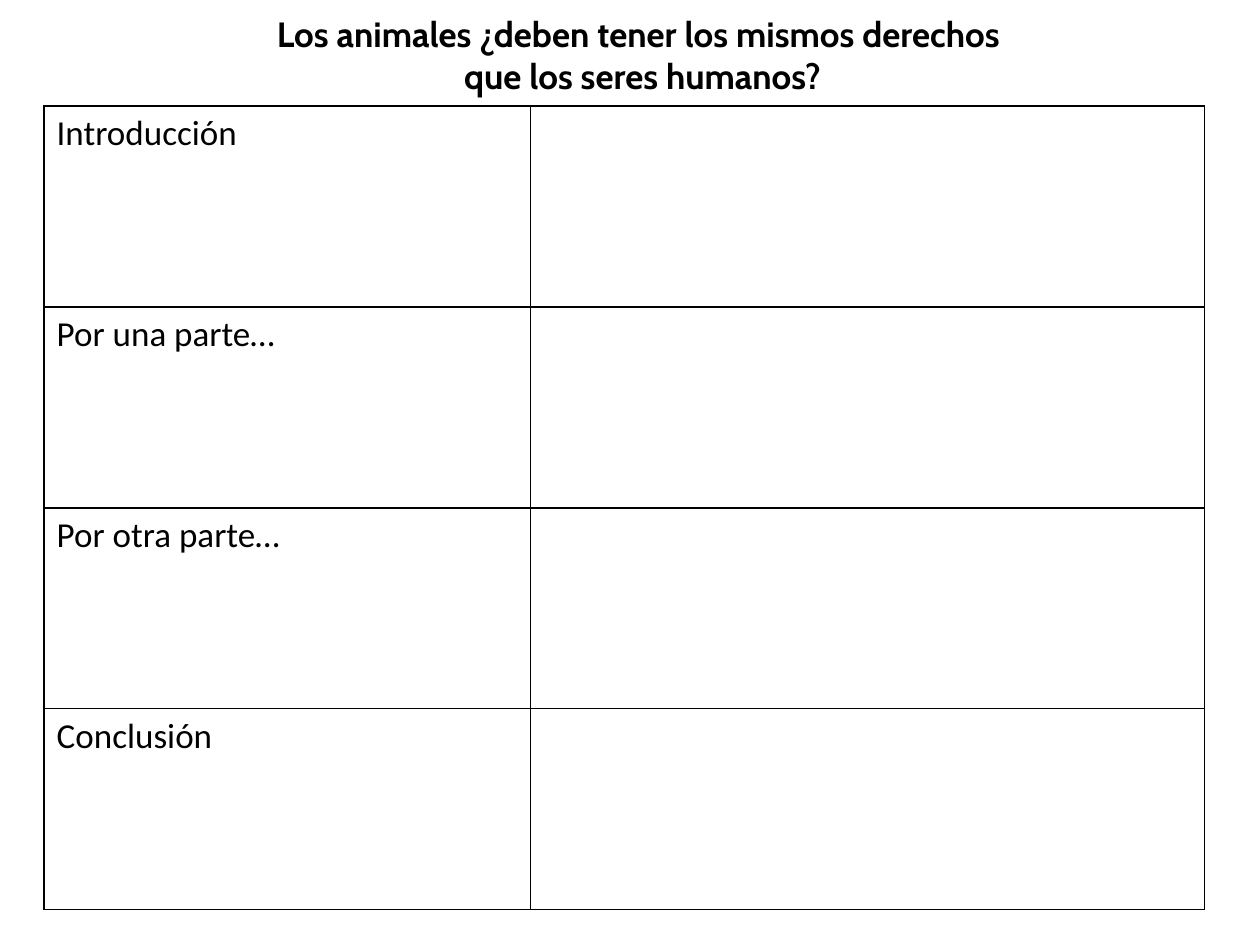
"""Build a writing-frame slide: a debate question above a four-part essay table."""
from dataclasses import dataclass

from lxml import etree
from pptx import Presentation
from pptx import util as u
from pptx.dml.color import RGBColor
from pptx.enum import text
from pptx.oxml import ns

BLACK = RGBColor(0x00, 0x00, 0x00)
WHITE = RGBColor(0xFF, 0xFF, 0xFF)
FONT_SIZE = u.Pt(20)
BORDER_WIDTH = u.Pt(1)
BORDER_SIDES = ("a:lnL", "a:lnR", "a:lnT", "a:lnB")

QUESTION_LINES = (
    "Los animales ¿deben tener los mismos derechos ",
    "que los seres humanos?",
)
SECTIONS = ("Introducción", "Por una parte…", "Por otra parte…", "Conclusión")
COLUMN_WIDTHS = (u.Pt(277.9), u.Pt(385.2))
ROW_HEIGHT = u.Pt(114.84)


@dataclass(frozen=True)
class Box:
    left: int
    top: int
    width: int
    height: int


QUESTION_BOX = Box(u.Pt(14.4), u.Pt(3.6), u.Pt(705.6), u.Pt(177.8))
FRAME_BOX = Box(u.Pt(25.2), u.Pt(60.5), sum(COLUMN_WIDTHS), ROW_HEIGHT * len(SECTIONS))


def add_run(paragraph, wording: str, font_name: str, bold: bool = False) -> None:
    run = paragraph.add_run()
    run.text = wording
    run.font.name = font_name
    run.font.size = FONT_SIZE
    run.font.bold = bold
    run.font.color.rgb = BLACK


def add_borders(cell) -> None:
    properties = cell._tc.get_or_add_tcPr()
    for position, side in enumerate(BORDER_SIDES):
        border = etree.Element(ns.qn(side), w=str(BORDER_WIDTH))
        fill = etree.SubElement(border, ns.qn("a:solidFill"))
        etree.SubElement(fill, ns.qn("a:srgbClr"), val=str(BLACK))
        properties.insert(position, border)


def add_question(slide, box: Box, lines: tuple[str, ...]) -> None:
    question = slide.shapes.add_textbox(box.left, box.top, box.width, box.height)
    question.text_frame.word_wrap = True
    paragraph = question.text_frame.paragraphs[0]
    paragraph.alignment = text.PP_ALIGN.CENTER
    for index, line in enumerate(lines):
        if index:
            paragraph.add_line_break()
        add_run(paragraph, line, "Cabin", bold=True)


def add_frame(slide, box: Box, sections: tuple[str, ...]) -> None:
    frame = slide.shapes.add_table(
        len(sections), len(COLUMN_WIDTHS), box.left, box.top, box.width, box.height
    ).table
    frame.first_row = False
    frame.horz_banding = False
    for column, width in zip(frame.columns, COLUMN_WIDTHS):
        column.width = width
    for row, section in zip(frame.rows, sections):
        row.height = ROW_HEIGHT
        for cell in row.cells:
            cell.fill.solid()
            cell.fill.fore_color.rgb = WHITE
            add_borders(cell)
        add_run(row.cells[0].text_frame.paragraphs[0], section, "Calibri")


def main() -> None:
    deck = Presentation()
    deck.slide_width, deck.slide_height = u.Pt(720), u.Pt(540)
    slide = deck.slides.add_slide(deck.slide_layouts[6])
    add_frame(slide, FRAME_BOX, SECTIONS)
    add_question(slide, QUESTION_BOX, QUESTION_LINES)
    deck.save("out.pptx")


if __name__ == "__main__":
    main()
